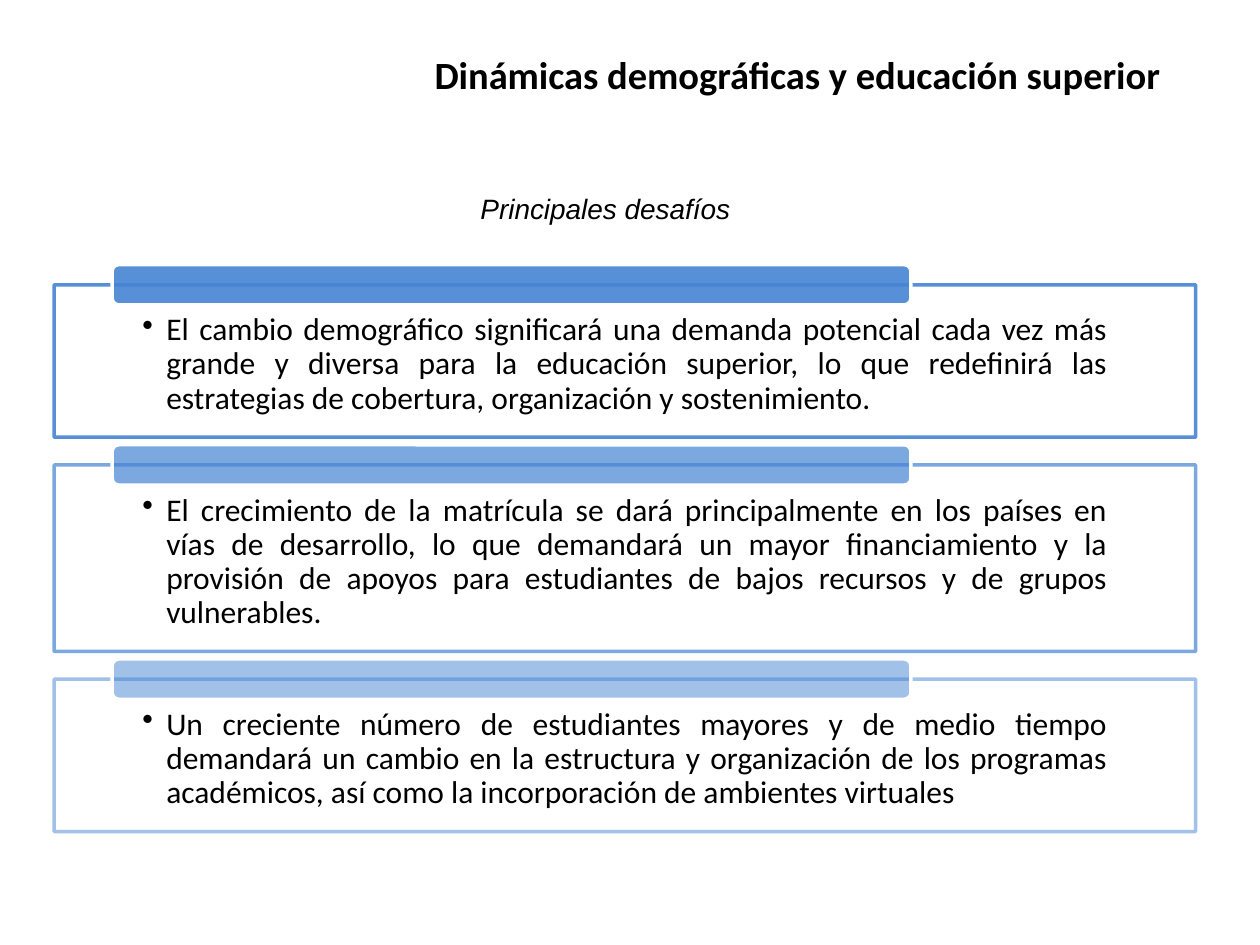
from lxml import etree
from pptx import Presentation
from pptx.dml.color import RGBColor
from pptx.enum import shapes, text
from pptx.oxml import ns
from pptx.util import Inches, Pt


def paint(fill, color, alpha=100):
    """Fill with a solid colour; alpha is the opacity in percent."""
    fill.solid()
    fill.fore_color.rgb = RGBColor.from_string(color)
    if alpha < 100:
        for clr in fill._xPr.iter(ns.qn("a:srgbClr")):
            if clr.getparent().getparent() is fill._xPr:
                etree.SubElement(clr, ns.qn("a:alpha"), val=str(alpha * 1000))


def write(frame, words, font, size, align):
    frame.word_wrap = True
    frame.text = words
    para = frame.paragraphs[0]
    para.alignment = align
    run = para.runs[0]
    run.font.name = font
    run.font.size = Pt(size)
    run.font.color.rgb = RGBColor.from_string("000000")
    return para, run


BLUE, WHITE = "4584D3", "FFFFFF"
SHAPE, ALIGN = shapes.MSO_SHAPE, text.PP_ALIGN

prs = Presentation()
prs.slide_width, prs.slide_height = Inches(10), Inches(7.5)
slide = prs.slides.add_slide(prs.slide_layouts[6])

# Challenges: words, panel height, opacity of the blue
items = [
    ("El cambio demográfico significará una demanda potencial cada vez más "
     "grande y diversa para la educación superior, lo que redefinirá las "
     "estrategias de cobertura, organización y sostenimiento.", 1.21, 90),
    ("El crecimiento de la matrícula se dará principalmente en los países en "
     "vías de desarrollo, lo que demandará un mayor financiamiento y la "
     "provisión de apoyos para estudiantes de bajos recursos y de grupos "
     "vulnerables.", 1.48, 70),
    ("Un creciente número de estudiantes mayores y de medio tiempo demandará "
     "un cambio en la estructura y organización de los programas académicos, "
     "así como la incorporación de ambientes virtuales", 1.21, 50),
]
top, gap = 2.26, 0.22
for words, high, alpha in items:
    panel = slide.shapes.add_shape(
        SHAPE.RECTANGLE, Inches(0.43), Inches(top), Inches(9.06), Inches(high))
    tab = slide.shapes.add_shape(
        SHAPE.ROUNDED_RECTANGLE, Inches(0.89), Inches(top - 0.16),
        Inches(6.34), Inches(0.32))
    paint(panel.fill, WHITE, 90)
    paint(panel.line.fill, BLUE, alpha)
    paint(tab.fill, BLUE, alpha)
    paint(tab.line.fill, WHITE)
    for shape in (panel, tab):
        shape.shadow.inherit = False
        shape.line.width = Pt(2)

    frame = panel.text_frame
    frame.vertical_anchor = text.MSO_ANCHOR.TOP
    frame.margin_left = frame.margin_right = Inches(0.7)
    frame.margin_top, frame.margin_bottom = Inches(0.23), Inches(0.14)
    para, run = write(frame, words, "Calibri", 18, ALIGN.JUSTIFY)
    para.level = 1
    para.line_spacing = 0.9
    props = para._p.get_or_add_pPr()
    props.set("marL", str(Inches(0.19)))
    props.set("indent", str(-Inches(0.19)))
    etree.SubElement(props, ns.qn("a:buChar"), char="•")
    top += high + gap

title = slide.shapes.add_textbox(
    Inches(3.35), Inches(0.36), Inches(6.22), Inches(0.47))
para, run = write(title.text_frame, "Dinámicas demográficas y educación superior",
                  "Calibri", 22, ALIGN.LEFT)
run.font.bold = True

label = slide.shapes.add_textbox(
    Inches(2.56), Inches(1.47), Inches(4.49), Inches(0.37))
label.text_frame.vertical_anchor = text.MSO_ANCHOR.MIDDLE
para, run = write(label.text_frame, "Principales desafíos", "Arial", 16, ALIGN.CENTER)
run.font.italic = True

prs.save("out.pptx")
